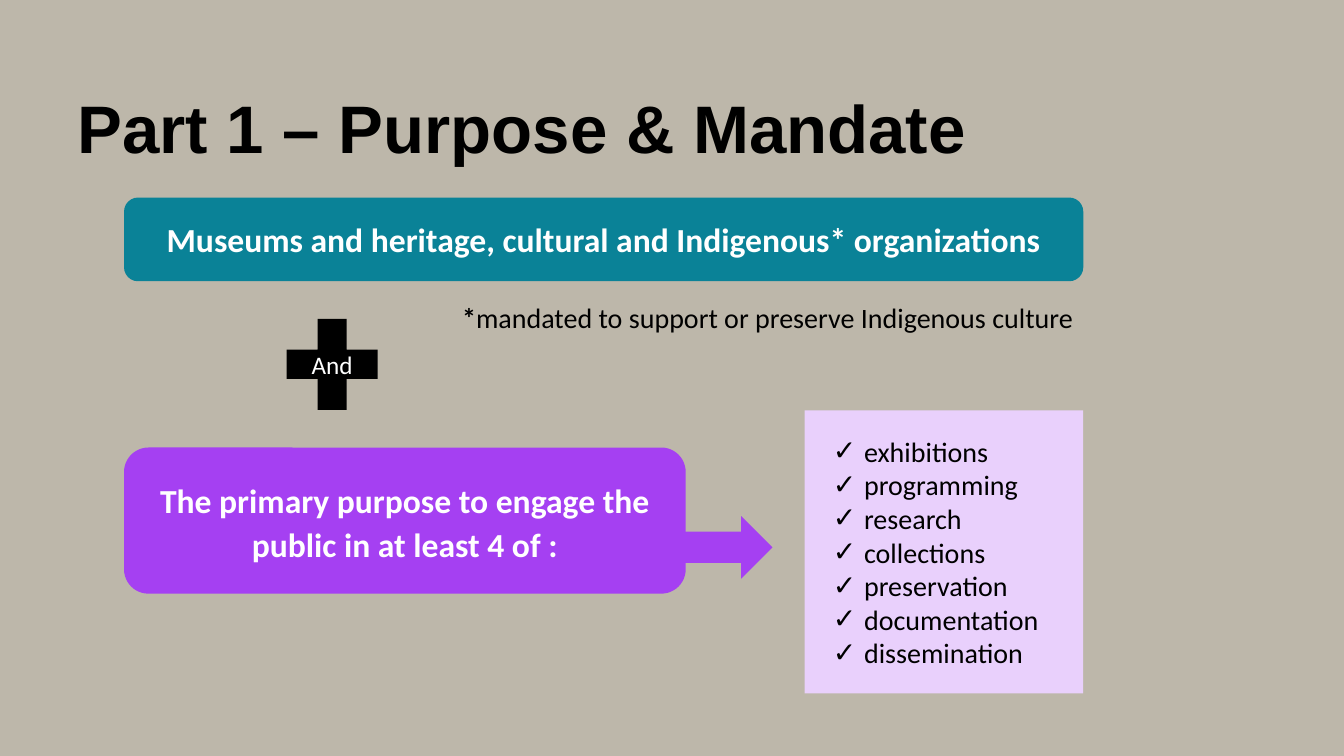
from lxml.etree import SubElement
from pptx import Presentation
from pptx.dml.color import RGBColor
from pptx.enum.shapes import MSO_SHAPE as Preset
from pptx.enum.text import MSO_ANCHOR as Anchor, MSO_AUTO_SIZE as AutoSize, PP_ALIGN as Align
from pptx.oxml.ns import qn
from pptx.util import Inches, Pt

WIDTH, HEIGHT = Inches(13.33), Inches(7.5)
BLACK, WHITE = "000000", "FFFFFF"
BACKGROUND, TEAL, PURPLE, LILAC = "BDB7AA", "0A8297", "A540F2", "E9D0FC"
LEFT, RIGHT = 9.23, 80.6
ACTIVITIES = [
    "exhibitions", "programming", "research", "collections",
    "preservation", "documentation", "dissemination",
]


def paint(fill, color):
    fill.solid()
    fill.fore_color.rgb = RGBColor.from_string(color)


def area(left, top, width, height):
    return (int(WIDTH * left / 100), int(HEIGHT * top / 100),
            int(WIDTH * width / 100), int(HEIGHT * height / 100))


def place(shape, bounds):
    shape.left, shape.top, shape.width, shape.height = bounds


def format_runs(paragraph, size, color, bold=False, name="Calibri"):
    for run in paragraph.runs:
        run.font.name = name
        run.font.size = Pt(size)
        run.font.bold = bold
        run.font.color.rgb = RGBColor.from_string(color)


def set_title(slide, text, bounds):
    title = slide.shapes.title
    place(title, bounds)
    frame = title.text_frame
    frame.text = text
    frame.auto_size = AutoSize.NONE
    frame.vertical_anchor = Anchor.MIDDLE
    frame.margin_left = frame.margin_top = frame.margin_right = 0
    frame.margin_bottom = Inches(0.28)
    paragraph = frame.paragraphs[0]
    paragraph.alignment = Align.LEFT
    paragraph.line_spacing = Pt(60)
    format_runs(paragraph, 48, BLACK, True, "Arial")


def add_block(slide, preset, bounds, color, text="", size=24, bold=True):
    shape = slide.shapes.add_shape(preset, *bounds)
    shape.shadow.inherit = False
    paint(shape.fill, color)
    shape.line.fill.background()
    if text:
        frame = shape.text_frame
        frame.text = text
        frame.word_wrap = True
        frame.vertical_anchor = Anchor.MIDDLE
        paragraph = frame.paragraphs[0]
        paragraph.alignment = Align.CENTER
        format_runs(paragraph, size, WHITE, bold)
    return shape


def add_note(slide, mark, text, bounds):
    frame = slide.shapes.add_textbox(*bounds).text_frame
    frame.word_wrap = True
    paragraph = frame.paragraphs[0]
    paragraph.alignment = Align.RIGHT
    paragraph.add_run().text = mark
    paragraph.add_run().text = text
    format_runs(paragraph, 20, BLACK)
    paragraph.runs[0].font.bold = True


def add_check(paragraph):
    properties = paragraph._p.get_or_add_pPr()
    properties.set("marL", str(Inches(0.49)))
    properties.set("indent", str(Inches(-0.31)))
    SubElement(properties, qn("a:buChar")).set("char", "✓")


def set_checklist(body, items, bounds):
    place(body, bounds)
    paint(body.fill, LILAC)
    frame = body.text_frame
    frame.text = "\n".join(items)
    frame.auto_size = AutoSize.NONE
    frame.vertical_anchor = Anchor.MIDDLE
    for paragraph in frame.paragraphs:
        add_check(paragraph)
        paragraph.space_before = Pt(0)
        format_runs(paragraph, 20, BLACK)


def main():
    presentation = Presentation()
    presentation.slide_width, presentation.slide_height = WIDTH, HEIGHT
    slide = presentation.slides.add_slide(presentation.slide_layouts[1])
    paint(slide.background.fill, BACKGROUND)

    set_title(slide, "Part 1 – Purpose & Mandate", area(5.78, 10.67, 90.32, 15.47))
    add_block(slide, Preset.ROUNDED_RECTANGLE, area(LEFT, 26.13, RIGHT - LEFT, 11.07), TEAL,
              "Museums and heritage, cultural and Indigenous* organizations")
    add_note(slide, "*", "mandated to support or preserve Indigenous culture",
             area(31.06, 39.07, RIGHT - 31.06, 5.87))
    add_block(slide, Preset.MATH_PLUS, area(20.1, 40, 9.23, 16.4), BLACK, "And", 18, False)
    purpose = add_block(slide, Preset.ROUNDED_RECTANGLE, area(LEFT, 59.2, 41.79, 19.33), PURPLE,
                        "The primary purpose to engage the public in at least 4 of :")
    paragraph = purpose.text_frame.paragraphs[0]
    paragraph.line_spacing = 1.07
    paragraph.space_after = Pt(8)
    add_block(slide, Preset.RIGHT_ARROW, area(46.44, 68.27, 11.03, 8.27), PURPLE)
    set_checklist(slide.placeholders[1], ACTIVITIES, area(59.86, 54.27, RIGHT - 59.86, 37.47))

    presentation.save("out.pptx")


if __name__ == "__main__":
    main()
